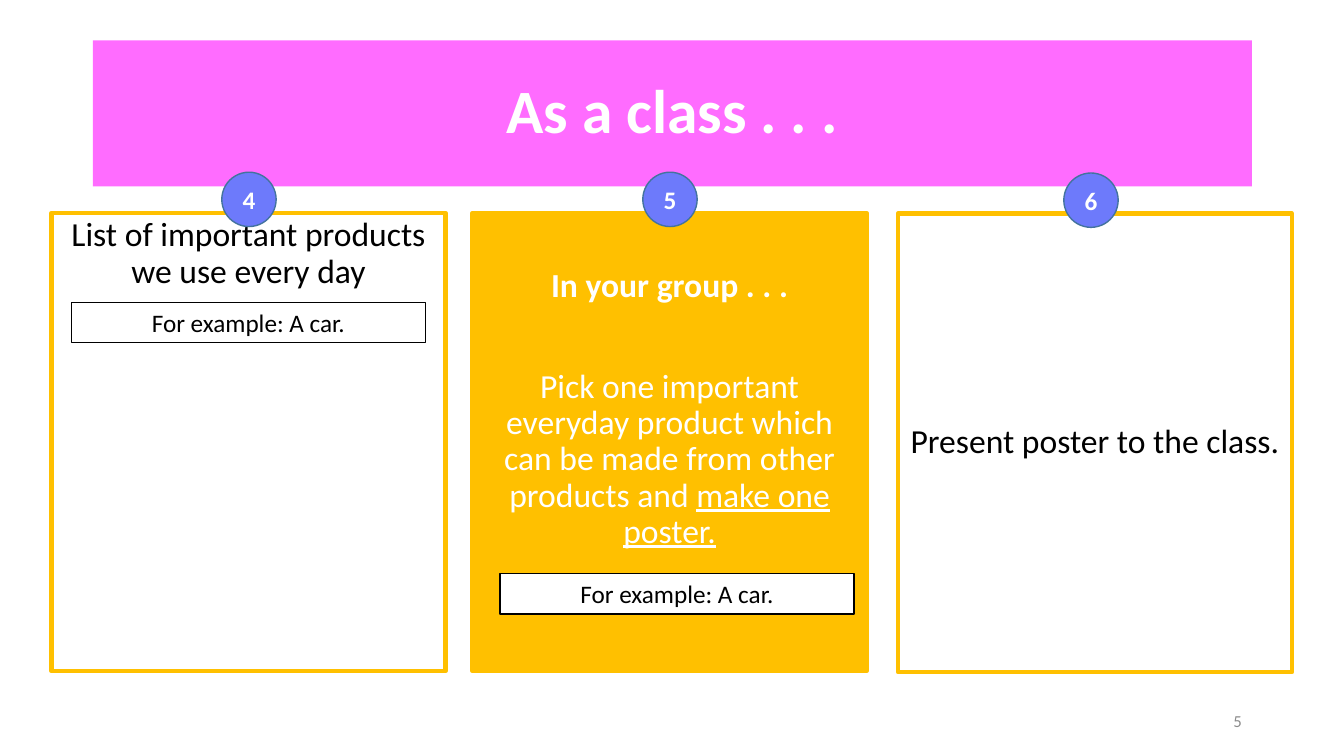
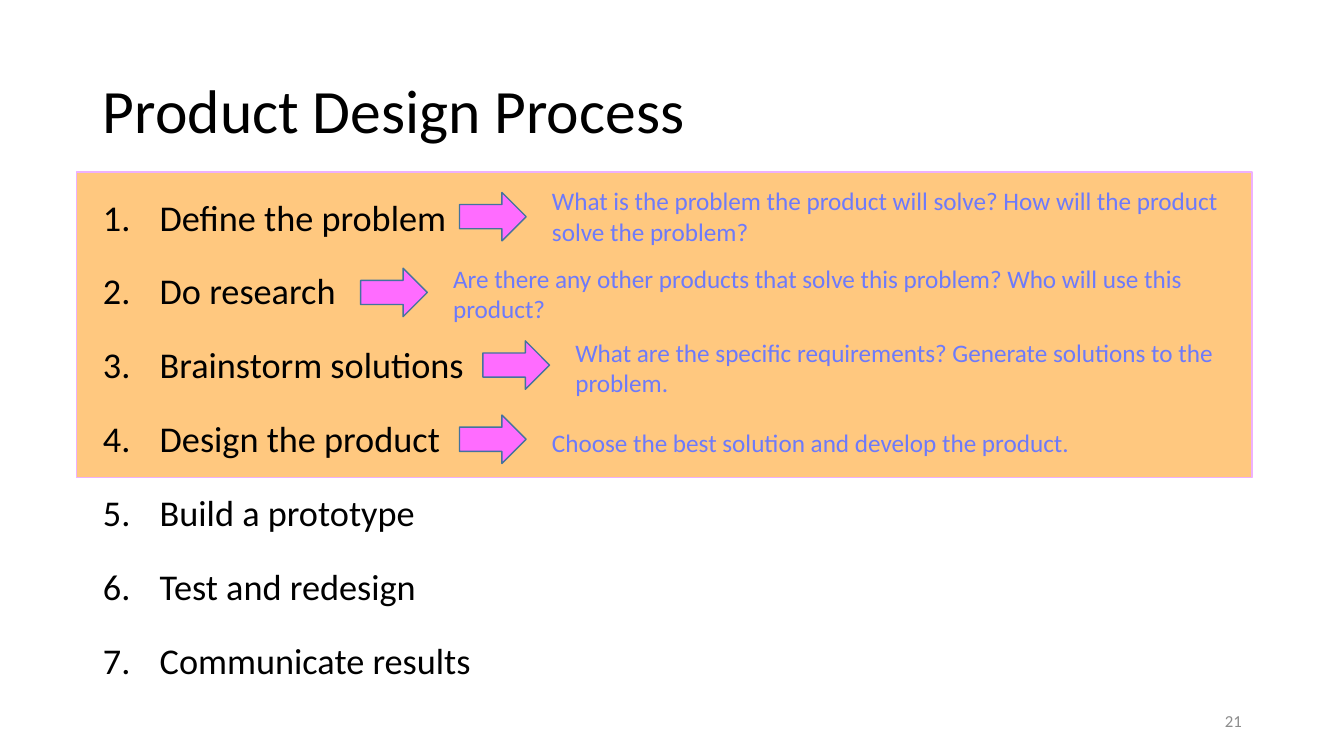
from dataclasses import dataclass
from typing import Optional

from lxml.etree import SubElement
from pptx import Presentation
from pptx.dml.color import RGBColor
from pptx.enum.shapes import MSO_SHAPE as Preset
from pptx.enum.text import MSO_ANCHOR as Anchor, MSO_AUTO_SIZE as AutoSize, PP_ALIGN as Align
from pptx.oxml.ns import qn
from pptx.util import Cm, Pt

FONT = "Calibri"
WHITE, BLACK, GREY = "FFFFFF", "000000", "8C8C8C"
PINK, VIOLET, GOLD, ORANGE = "FF6CFF", "6D7AFB", "FFC000", "FF9300"
LILAC, STEEL = "EEB1FD", "43739E"
TITLE_ONLY, TITLE_AND_BODY = 5, 1
BADGE_SIZE, BADGE_LEFT, BADGE_PITCH = 1.37, 5.59, 10.61
ARROW_WIDTH, ARROW_HEIGHT, NOTE_OFFSET = 1.68, 1.22, 2.08


@dataclass(frozen=True)
class Frame:
    """Left, top, width and height in centimetres."""
    left: float
    top: float
    width: float
    height: float

    def lengths(self):
        return Cm(self.left), Cm(self.top), Cm(self.width), Cm(self.height)


@dataclass(frozen=True)
class Span:
    text: str
    bold: bool = False
    underline: bool = False


@dataclass(frozen=True)
class Panel:
    left: float
    top: float
    fill: str
    text_color: str
    paragraphs: tuple
    anchor: Anchor = Anchor.TOP
    top_inset: float = 0.13
    gap: float = 0
    example: Optional[Frame] = None


@dataclass(frozen=True)
class Note:
    text: str
    arrow_left: float
    arrow_top: float
    top: float
    width: float
    height: float


TITLE_FRAME = Frame(2.34, 1.02, 29.21, 3.68)
NUMBER_FRAME = Frame(23.93, 17.65, 7.62, 1.02)
LIST_FRAME = Frame(2.34, 4.34, 11.53, 13.31)
HIGHLIGHT_FRAME = Frame(1.93, 4.34, 29.62, 7.7)

PANELS = (
    Panel(1.3, 5.36, WHITE, BLACK,
          ((Span("List of important products we use every day"),),),
          example=Frame(1.8, 7.62, 8.92, 1.02)),
    Panel(11.91, 5.36, GOLD, WHITE,
          ((Span("In your group . . .", bold=True),),
           (Span("Pick one important everyday product which can be made "
                 "from other products and "),
            Span("make one poster.", underline=True))),
          top_inset=1.41, gap=46, example=Frame(12.6, 14.45, 8.92, 1.02)),
    Panel(22.63, 5.38, WHITE, BLACK,
          ((Span("Present poster to the class."),),), anchor=Anchor.MIDDLE),
)
STEPS = ("Define the problem", "Do research", "Brainstorm solutions",
         "Design the product", "Build a prototype", "Test and redesign",
         "Communicate results")
NOTES = (
    Note("What is the problem the product will solve? How will the product "
         "solve the problem?", 11.58, 4.85, 4.55, 17.68, 1.8),
    Note("Are there any other products that solve this problem? Who will use "
         "this product?", 9.09, 6.76, 6.5, 20.37, 1.8),
    Note("What are the specific requirements? Generate solutions to the "
         "problem.", 12.17, 8.59, 8.36, 17.68, 1.8),
    Note("Choose the best solution and develop the product.",
         11.58, 10.46, 10.64, 17.68, 1.02),
)


def rgb(color: str) -> RGBColor:
    return RGBColor.from_string(color)


def write(box, *paragraphs, size: float = 18, color: str = BLACK,
          align: Align = Align.LEFT, anchor: Anchor = Anchor.TOP,
          spacing: float = 1.0, gap: float = 0, top_inset: float = 0.13) -> None:
    """Fill a box; each paragraph is a tuple of spans, gap is points between them."""
    frame = box.text_frame
    frame.word_wrap = True
    frame.auto_size = AutoSize.NONE
    frame.vertical_anchor = anchor
    frame.margin_top = Cm(top_inset)
    for index, spans in enumerate(paragraphs):
        para = frame.add_paragraph() if index else frame.paragraphs[0]
        para.alignment = align
        para.line_spacing = spacing
        para.space_before = Pt(gap if index else 0)
        for span in spans:
            run = para.add_run()
            run.text = span.text
            run.font.name = FONT
            run.font.size = Pt(size)
            run.font.bold = span.bold
            run.font.underline = span.underline
            run.font.color.rgb = rgb(color)


def add_box(slide, frame: Frame, fill: str, line: str, line_width: float = 1,
            preset: Preset = Preset.RECTANGLE):
    box = slide.shapes.add_shape(preset, *frame.lengths())
    box.shadow.inherit = False
    box.fill.solid()
    box.fill.fore_color.rgb = rgb(fill)
    box.line.color.rgb = rgb(line)
    box.line.width = Pt(line_width)
    return box


def place(box, frame: Frame) -> None:
    box.left, box.top, box.width, box.height = frame.lengths()


def add_page(deck, layout: int, title: Span, number: str, color: str = BLACK,
             align: Align = Align.LEFT):
    page = deck.slides.add_slide(deck.slide_layouts[layout])
    place(page.shapes.title, TITLE_FRAME)
    write(page.shapes.title, (title,), size=44, color=color, align=align,
          anchor=Anchor.MIDDLE, spacing=0.9)
    number_box = page.shapes.add_textbox(*NUMBER_FRAME.lengths())
    write(number_box, (Span(number),), size=12, color=GREY, align=Align.RIGHT,
          anchor=Anchor.MIDDLE)
    return page


def number_paragraphs(box, indent: float) -> None:
    for para in box.text_frame.paragraphs:
        properties = para._p.get_or_add_pPr()
        properties.set("marL", str(Cm(indent)))
        properties.set("indent", str(-Cm(indent)))
        SubElement(properties, qn("a:buFont"), typeface=FONT)
        SubElement(properties, qn("a:buAutoNum"), type="arabicPeriod")


def set_opacity(box, percent: int) -> None:
    color = box.fill._xPr.find(qn("a:solidFill"))[0]
    SubElement(color, qn("a:alpha"), val=str(percent * 1000))


def draw_panel(page, panel: Panel, position: int) -> None:
    box = add_box(page, Frame(panel.left, panel.top, 9.93, 11.56),
                  panel.fill, GOLD, 3)
    write(box, *panel.paragraphs, size=24, color=panel.text_color,
          align=Align.CENTER, anchor=panel.anchor, spacing=0.9, gap=panel.gap,
          top_inset=panel.top_inset)
    badge_frame = Frame(BADGE_LEFT + position * BADGE_PITCH, panel.top - 1.02,
                        BADGE_SIZE, BADGE_SIZE)
    badge = add_box(page, badge_frame, VIOLET, STEEL, preset=Preset.OVAL)
    write(badge, (Span(str(position + 4), bold=True),), color=WHITE,
          align=Align.CENTER, anchor=Anchor.MIDDLE)
    if panel.example:
        example = add_box(page, panel.example, WHITE, BLACK)
        write(example, (Span("For example: A car."),), align=Align.CENTER)


def draw_note(page, note: Note) -> None:
    add_box(page, Frame(note.arrow_left, note.arrow_top, ARROW_WIDTH, ARROW_HEIGHT),
            PINK, STEEL, preset=Preset.RIGHT_ARROW)
    frame = Frame(note.arrow_left + NOTE_OFFSET, note.top, note.width, note.height)
    box = page.shapes.add_textbox(*frame.lengths())
    write(box, (Span(note.text),), color=VIOLET)


def build_class_page(deck) -> None:
    page = add_page(deck, TITLE_ONLY, Span("As a class . . .", bold=True), "5",
                    color=WHITE, align=Align.CENTER)
    page.shapes.title.fill.solid()
    page.shapes.title.fill.fore_color.rgb = rgb(PINK)
    for position, panel in enumerate(PANELS):
        draw_panel(page, panel, position)


def build_process_page(deck) -> None:
    page = add_page(deck, TITLE_AND_BODY, Span("Product Design Process"), "21")
    highlight = add_box(page, HIGHLIGHT_FRAME, ORANGE, LILAC)
    set_opacity(highlight, 50)
    page.shapes.title.element.addprevious(highlight.element)
    steps = page.placeholders[1]
    place(steps, LIST_FRAME)
    write(steps, *((Span(step),) for step in STEPS), size=25.9, spacing=1.4,
          gap=9.3)
    number_paragraphs(steps, 1.43)
    for note in NOTES:
        draw_note(page, note)


def main() -> None:
    deck = Presentation()
    deck.slide_width, deck.slide_height = Cm(33.87), Cm(19.05)
    build_class_page(deck)
    build_process_page(deck)
    deck.save("out.pptx")


if __name__ == "__main__":
    main()
